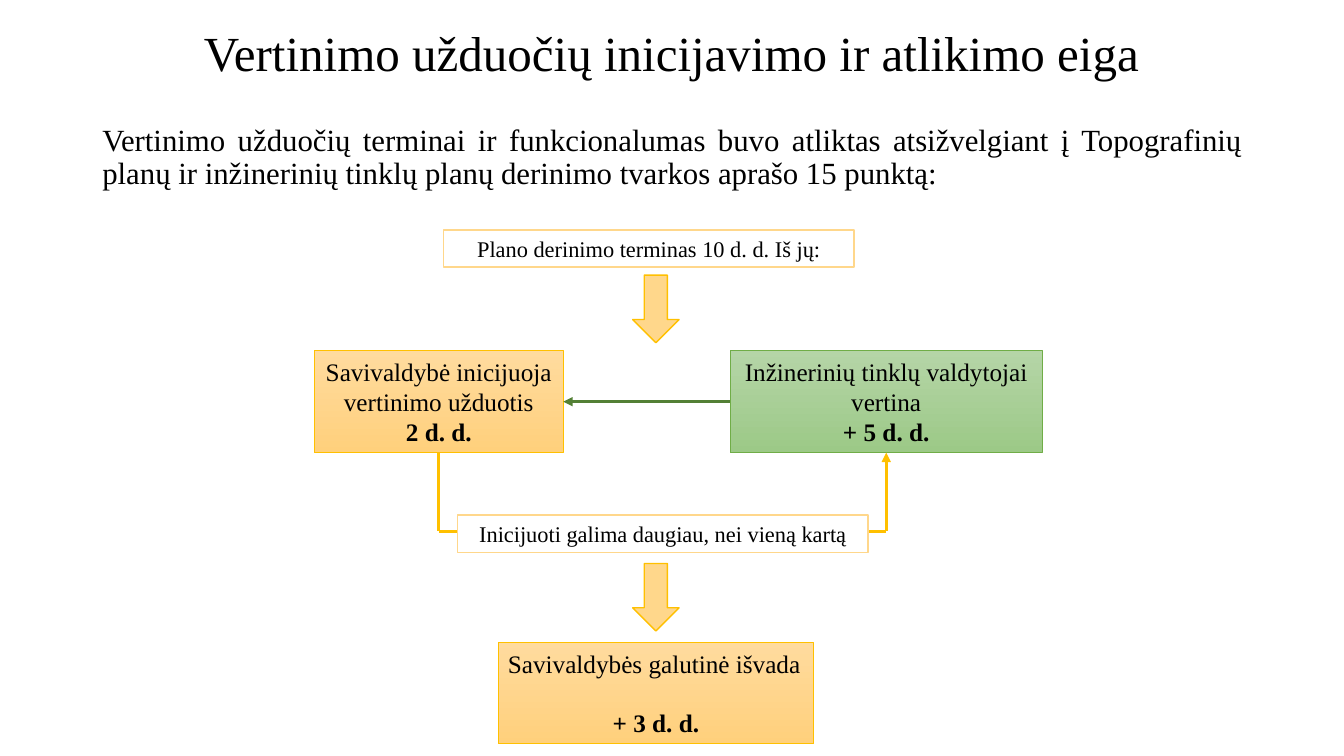
"""Build a slide showing how assessment tasks are initiated and carried out."""
from dataclasses import dataclass

from lxml.etree import SubElement
from pptx import Presentation
from pptx.dml.color import RGBColor
from pptx.enum.shapes import MSO_CONNECTOR as Connector, MSO_SHAPE as Preset
from pptx.enum.text import MSO_ANCHOR as Anchor, PP_ALIGN as Align
from pptx.oxml.ns import qn
from pptx.util import Inches, Pt


@dataclass(frozen=True)
class Theme:
    font: str = "Times New Roman"
    title: int = 35
    body: int = 22
    step: int = 18
    note: int = 16
    text: str = "000000"
    paper: str = "FFFFFF"
    pale: str = "FFD78B"
    gold: str = "FFC000"
    green: str = "70AD47"
    dark_green: str = "538035"
    gold_blend: tuple = ("FFDB9E", "FFD07C")
    green_blend: tuple = ("B5D5A7", "9CC987")


THEME = Theme()
TITLE = "Vertinimo užduočių inicijavimo ir atlikimo eiga"
INTRO = ("Vertinimo užduočių terminai ir funkcionalumas buvo atliktas atsižvelgiant į "
         "Topografinių planų ir inžinerinių tinklų planų derinimo tvarkos aprašo 15 punktą:")

# Centre, top and width are percentages of the slide.
STEPS = {
    "initiate": dict(lines=("Savivaldybė inicijuoja vertinimo užduotis", "2 d. d."),
                     centre=32.65, top=46.4, width=18.53,
                     blend=THEME.gold_blend, line=THEME.gold),
    "assess": dict(lines=("Inžinerinių tinklų valdytojai vertina", "+ 5 d. d."),
                   centre=65.94, top=46.4, width=23.26,
                   blend=THEME.green_blend, line=THEME.green),
    "conclude": dict(lines=("Savivaldybės galutinė išvada", "+ 3 d. d."),
                     centre=48.8, top=84.93, width=23.48,
                     blend=THEME.gold_blend, line=THEME.gold,
                     first_align=Align.LEFT, gap=21, wrap=False),
}
NOTES = [("Plano derinimo terminas 10 d. d. Iš jų:", 48.27, 30.4),
         ("Inicijuoti galima daugiau, nei vieną kartą", 49.32, 68.13)]
ARROW_TOPS = [36.4, 74.53]
ARROW_CENTRE = 48.8
LOOP_LEVEL = 70.27
STEP_HEIGHT, NOTE_HEIGHT, ARROW_HEIGHT = 13.47, 4.93, 8.93
NOTE_WIDTH, ARROW_WIDTH = 30.53, 3.45

presentation = Presentation()
presentation.slide_width, presentation.slide_height = Inches(13.33), Inches(7.5)
slide = presentation.slides.add_slide(presentation.slide_layouts[6])


def across(share):
    return round(presentation.slide_width * share / 100)


def down(share):
    return round(presentation.slide_height * share / 100)


def place(centre, top, width, height):
    return across(centre - width / 2), down(top), across(width), down(height)


def color(code):
    return RGBColor.from_string(code)


def write(shape, text, size, align=Align.CENTER, bold=False, spacing=None,
          gap=0, anchor=Anchor.MIDDLE, wrap=True, append=False):
    frame = shape.text_frame
    frame.word_wrap, frame.vertical_anchor = wrap, anchor
    paragraph = frame.add_paragraph() if append else frame.paragraphs[0]
    paragraph.alignment, paragraph.line_spacing = align, spacing
    paragraph.space_before = Pt(gap)
    run = paragraph.add_run()
    run.text = text
    run.font.name, run.font.size, run.font.bold = THEME.font, Pt(size), bold
    run.font.color.rgb = color(THEME.text)


def add_block(preset, box, line, weight, fill=None, blend=None):
    shape = slide.shapes.add_shape(preset, *box)
    shape.shadow.inherit = False
    shape.line.color.rgb, shape.line.width = color(line), Pt(weight)
    if blend:
        shape.fill.gradient()
        shape.fill.gradient_angle = 270
        for stop, code in zip(shape.fill.gradient_stops, blend):
            stop.color.rgb = color(code)
    else:
        shape.fill.solid()
        shape.fill.fore_color.rgb = color(fill)
    return shape


def add_step(lines, centre, top, width, blend, line,
             first_align=Align.CENTER, gap=0, wrap=True):
    shape = add_block(Preset.RECTANGLE, place(centre, top, width, STEP_HEIGHT),
                      line, 0.5, blend=blend)
    write(shape, lines[0], THEME.step, align=first_align, wrap=wrap)
    write(shape, lines[1], THEME.step, bold=True, gap=gap, wrap=wrap, append=True)
    return shape


def add_line(start, end, code, begin=None, finish=None, head=False):
    connector = slide.shapes.add_connector(Connector.STRAIGHT, *start, *end)
    connector.line.color.rgb, connector.line.width = color(code), Pt(2.25)
    if begin:
        connector.begin_connect(*begin)
    if finish:
        connector.end_connect(*finish)
    if head:
        SubElement(connector.line._get_or_add_ln(), qn("a:tailEnd"), type="triangle")
    SubElement(connector._element.spPr, qn("a:effectLst"))


def add_heading(text, size, top, height, **style):
    box = slide.shapes.add_textbox(*place(50, top, 86.25, height))
    write(box, text, size, spacing=0.9, **style)


add_heading(TITLE, THEME.title, 1.6, 11.47)
add_heading(INTRO, THEME.body, 15.87, 14.53, align=Align.JUSTIFY, anchor=Anchor.TOP)

steps = {name: add_step(**step) for name, step in STEPS.items()}
initiate, assess = steps["initiate"], steps["assess"]
middle = initiate.top + initiate.height // 2
bottom = initiate.top + initiate.height
left, right = (across(STEPS[name]["centre"]) for name in ("initiate", "assess"))
level = down(LOOP_LEVEL)

add_line((left, bottom), (left, level), THEME.gold, begin=(initiate, 2))
add_line((left, level), (right, level), THEME.gold)
add_line((right, level), (right, bottom), THEME.gold, finish=(assess, 2), head=True)
add_line((assess.left, middle), (initiate.left + initiate.width, middle),
         THEME.dark_green, begin=(assess, 1), finish=(initiate, 3), head=True)

for text, centre, top in NOTES:
    note = add_block(Preset.RECTANGLE, place(centre, top, NOTE_WIDTH, NOTE_HEIGHT),
                     THEME.pale, 1, fill=THEME.paper)
    write(note, text, THEME.note)

for top in ARROW_TOPS:
    add_block(Preset.DOWN_ARROW, place(ARROW_CENTRE, top, ARROW_WIDTH, ARROW_HEIGHT),
              THEME.gold, 1, fill=THEME.pale)

presentation.save("out.pptx")
